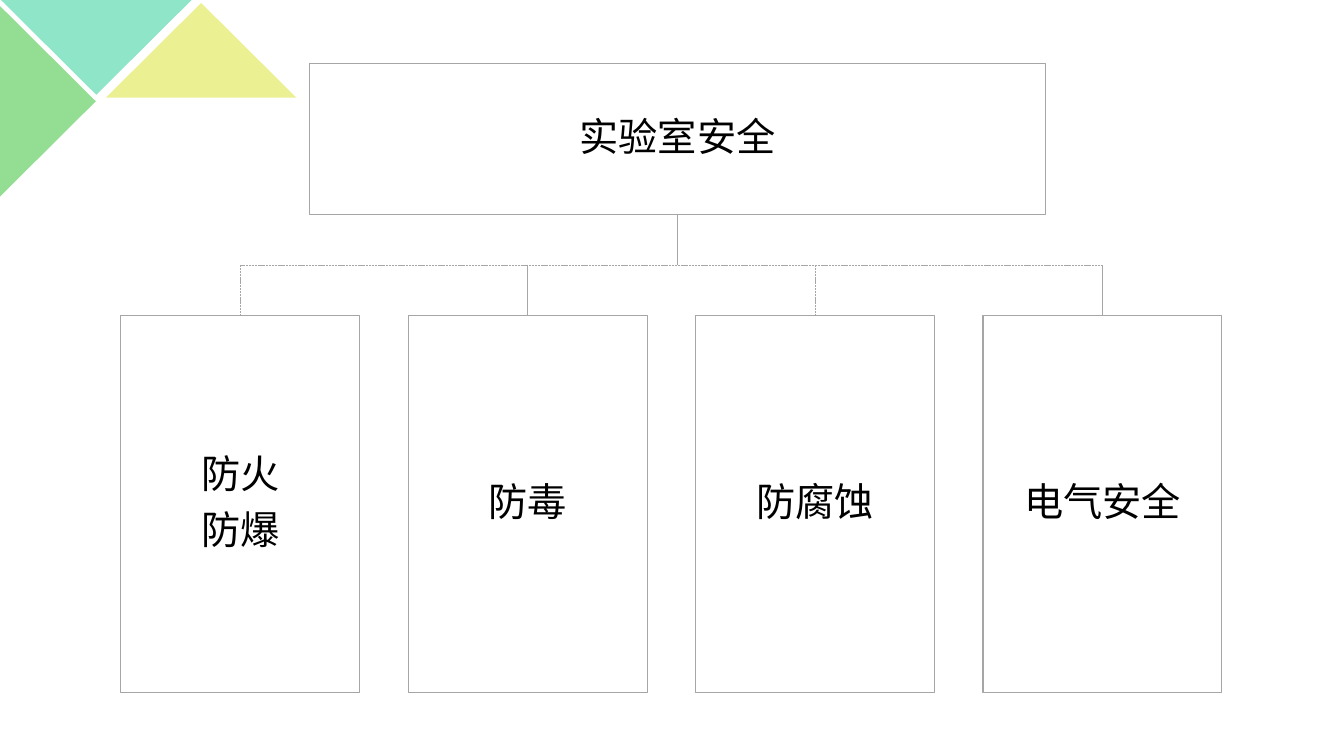
from lxml import etree
from pptx import Presentation
from pptx.dml.color import RGBColor
from pptx.enum.dml import MSO_LINE
from pptx.enum.shapes import MSO_CONNECTOR, MSO_SHAPE
from pptx.enum.text import MSO_ANCHOR, PP_ALIGN
from pptx.oxml.ns import qn
from pptx.util import Inches, Pt

RECT = MSO_SHAPE.RECTANGLE
TRI = MSO_SHAPE.ISOSCELES_TRIANGLE
LINE = MSO_CONNECTOR.STRAIGHT
DASH = MSO_LINE.SQUARE_DOT
MIDDLE = MSO_ANCHOR.MIDDLE
CENTER = PP_ALIGN.CENTER
TOP, BOTTOM = 0, 2
HEX = {
    "green": "94DE94",
    "mint": "8EE5C7",
    "lime": "EBF092",
    "gray": "A6A6A6",
    "ink": "000000",
}


def color(name):
    return RGBColor.from_string(HEX[name])


def write(frame, text, font="Arial", size=28, ink="ink"):
    frame.word_wrap = True
    frame.vertical_anchor = MIDDLE
    for i, words in enumerate(text.split("\n")):
        para = frame.add_paragraph() if i else frame.paragraphs[0]
        para.alignment = CENTER
        para.line_spacing = 0.9
        para.space_before = Pt(10)
        run = para.add_run()
        run.text = words
        run.font.name = font
        run.font.size = Pt(size)
        run.font.color.rgb = color(ink)


class Chart:
    def __init__(self, slide, line="gray"):
        self.shapes = slide.shapes
        self.line = color(line)

    def corner(self, x, y, w, h, fill, turn=0):
        shape = self.shapes.add_shape(TRI, Inches(x), Inches(y), Inches(w), Inches(h))
        shape.shadow.inherit = False
        shape.rotation = turn
        shape.fill.solid()
        shape.fill.fore_color.rgb = color(fill)
        shape.line.fill.background()

    def box(self, x, y, w, h, text):
        shape = self.shapes.add_shape(RECT, Inches(x), Inches(y), Inches(w), Inches(h))
        shape.shadow.inherit = False
        shape.fill.background()
        shape.line.color.rgb = self.line
        shape.line.width = Pt(0.75)
        write(shape.text_frame, text)
        return shape

    def link(self, x1, y1, x2, y2, dash=False, box=None, side=TOP):
        line = self.shapes.add_connector(LINE, Inches(x1), Inches(y1), Inches(x2), Inches(y2))
        line.line.color.rgb = self.line
        line.line.width = Pt(0.5)
        if dash:
            line.line.dash_style = DASH
        etree.SubElement(line._element.spPr, qn("a:effectLst"))
        if box is not None:
            line.end_connect(box, side)


def main():
    deck = Presentation()
    deck.slide_width, deck.slide_height = Inches(13.33), Inches(7.5)
    chart = Chart(deck.slides.add_slide(deck.slide_layouts[6]))

    chart.corner(-0.47, 0.53, 1.89, 0.95, "green", turn=90)
    chart.corner(0.01, 0, 1.89, 0.94, "mint", turn=180)
    chart.corner(1.05, 0.03, 1.89, 0.94, "lime")

    left, top, wide, tall, step = 1.2, 3.13, 2.37, 3.74, 2.85
    bus = 2.63
    topics = ["防火\n防爆", "防毒", "防腐蚀", "电气安全"]
    mids = [left + i * step + wide / 2 for i in range(len(topics))]

    chart.link(mids[0], bus, mids[-1], bus, dash=True)
    root = chart.box(3.07, 0.63, 7.3, 1.5, "实验室安全")
    chart.link(6.72, bus, 6.72, 2.13, box=root, side=BOTTOM)
    for i, (mid, topic) in enumerate(zip(mids, topics)):
        leaf = chart.box(mid - wide / 2, top, wide, tall, topic)
        chart.link(mid, bus, mid, top, dash=i % 2 == 0, box=leaf)

    deck.save("out.pptx")


if __name__ == "__main__":
    main()
